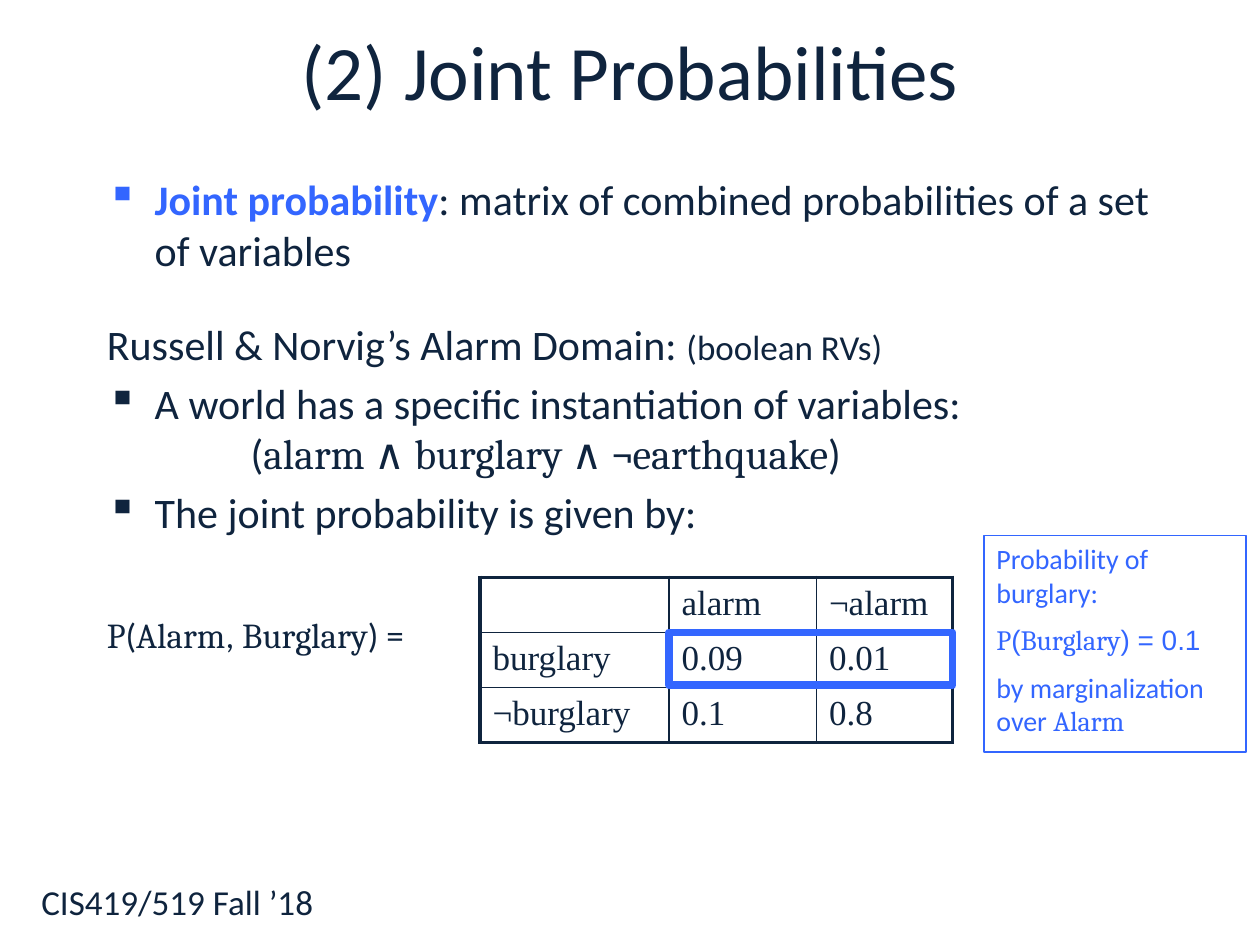
"""Builds the slide on joint probabilities."""
import pptx
import pptx.dml.color
import pptx.enum.shapes
import pptx.enum.text
import pptx.oxml
import pptx.oxml.ns
import pptx.util

NAVY = pptx.dml.color.RGBColor(0x0F, 0x24, 0x3E)
BLUE = pptx.dml.color.RGBColor(0x33, 0x66, 0xFF)
WIDE = pptx.util.Inches(10)
HIGH = pptx.util.Inches(7.5)
SANS, MATH, ROMAN, PLAIN = "Calibri", "Cambria", "Times New Roman", "Arial"
STEP = 0.38
COLS = (15, 11.7, 10.8)
ROWS = (5.83, 5.83, 5.83)
LEFT, TOP = 38.1, 61.1
CELLS = (
    ("", "alarm", "¬alarm"),
    ("burglary", "0.09", "0.01"),
    ("¬burglary", "0.1", "0.8"),
)


def across(share):
    return int(WIDE * share / 100)


def down(share):
    return int(HIGH * share / 100)


def place(x, y, w, h):
    return across(x), down(y), across(w), down(h)


def style(run, size, font, color, bold=False):
    run.font.size = pptx.util.Pt(size)
    run.font.name = font
    run.font.color.rgb = color
    run.font.bold = bold


def write(para, parts, size, color=NAVY, gap=0):
    para.space_before = pptx.util.Pt(gap)
    for text, font, *look in parts:
        run = para.add_run()
        run.text = text
        style(run, size, font, color)
        for key, value in (look[0] if look else {}).items():
            if key == "color":
                run.font.color.rgb = value
            else:
                setattr(run.font, key, value)


def indent(para, left, mark=None):
    props = para._p.get_or_add_pPr()
    props.set("marL", str(pptx.util.Inches(left)))
    if mark:
        props.set("indent", str(-pptx.util.Inches(STEP)))
        item = pptx.oxml.parse_xml(
            f'<a:buChar {pptx.oxml.ns.nsdecls("a")} char="{mark}"/>')
        props.append(item)


def add_box(slide, area):
    box = slide.shapes.add_textbox(*place(*area))
    box.text_frame.word_wrap = True
    return box


def add_line(slide, area, text, size):
    frame = add_box(slide, area).text_frame
    frame.text = text
    style(frame.paragraphs[0].runs[0], size, SANS, NAVY)
    return frame


def add_body(slide):
    frame = add_box(slide, (7.5, 17.73, 85, 72.67)).text_frame
    lines = (
        ([("Joint probability", SANS, {"color": BLUE, "bold": True}),
          (": matrix of combined probabilities of a set of variables", SANS)],
         24, 0, STEP, "▪"),
        ([("Russell & Norvig’s Alarm Domain: ", SANS),
          ("(boolean RVs)", SANS, {"size": pptx.util.Pt(20)})],
         24, 25, 0, None),
        ([("A world has a specific instantiation of variables:", SANS)],
         24, 4.8, STEP, "▪"),
        ([("(", SANS), ("alarm ", MATH), ("∧ ", SANS), ("burglary ", MATH),
          ("∧ ¬", SANS), ("earthquake", MATH), (")", SANS)],
         24, 0, 3 * STEP, None),
        ([("The joint probability is given by:", SANS)],
         24, 4.8, STEP, "▪"),
        ([("P", MATH), ("(", SANS), ("Alarm", MATH), (", ", SANS),
          ("Burglary", MATH), (") =", SANS)],
         20, 44, 0, None),
    )
    for at, (parts, size, gap, left, mark) in enumerate(lines):
        para = frame.add_paragraph() if at else frame.paragraphs[0]
        write(para, parts, size, gap=gap)
        indent(para, left, mark)


def edge(cell, widths):
    props = cell._tc.get_or_add_tcPr()
    for at, (side, width) in enumerate(widths.items()):
        line = pptx.oxml.parse_xml(
            f'<a:{side} {pptx.oxml.ns.nsdecls("a")} w="{pptx.util.Pt(width)}">'
            f'<a:solidFill><a:srgbClr val="{NAVY}"/></a:solidFill></a:{side}>')
        props.insert(at, line)


def add_grid(slide):
    area = place(LEFT, TOP, sum(COLS), sum(ROWS))
    table = slide.shapes.add_table(len(ROWS), len(COLS), *area).table
    table.first_row = table.horz_banding = False
    for col, share in zip(table.columns, COLS):
        col.width = across(share)
    for row, share in zip(table.rows, ROWS):
        row.height = down(share)
    for r, texts in enumerate(CELLS):
        for c, text in enumerate(texts):
            cell = table.cell(r, c)
            cell.fill.background()
            cell.text = text
            for run in cell.text_frame.paragraphs[0].runs:
                style(run, 20, ROMAN, NAVY)
            outer = {"lnL": c == 0, "lnR": c == len(COLS) - 1,
                     "lnT": r == 0, "lnB": r == len(ROWS) - 1}
            edge(cell, {k: 2.25 if out else 1 for k, out in outer.items()})


def add_note(slide):
    box = add_box(slide, (78.1, 56.67, 20.8, 22.93))
    box.line.color.rgb = BLUE
    box.line.width = pptx.util.Pt(0.75)
    lines = (
        [("Probability of burglary:", SANS)],
        [("P", MATH), ("(", PLAIN), ("Burglary", MATH), (") = 0.1", PLAIN)],
        [("by marginalization over ", SANS), ("Alarm", MATH)],
    )
    frame = box.text_frame
    for at, parts in enumerate(lines):
        para = frame.add_paragraph() if at else frame.paragraphs[0]
        write(para, parts, 16, BLUE, 8 if at else 0)


def add_frame(slide):
    area = place(LEFT + COLS[0], TOP + ROWS[0], sum(COLS[1:]), 5.6)
    kind = pptx.enum.shapes.MSO_SHAPE.RECTANGLE
    shape = slide.shapes.add_shape(kind, *area)
    shape.shadow.inherit = False
    shape.fill.background()
    shape.line.color.rgb = BLUE
    shape.line.width = pptx.util.Pt(4.5)


def main():
    deck = pptx.Presentation()
    deck.slide_width, deck.slide_height = WIDE, HIGH
    slide = deck.slides.add_slide(deck.slide_layouts[6])
    add_line(slide, (2.3, 92.53, 96, 7.47), "CIS419/519 Fall ’18", 20)
    title = add_line(slide, (7.5, 0.4, 85, 14), "(2) Joint Probabilities", 44)
    title.vertical_anchor = pptx.enum.text.MSO_ANCHOR.MIDDLE
    title.paragraphs[0].alignment = pptx.enum.text.PP_ALIGN.CENTER
    add_body(slide)
    add_grid(slide)
    add_note(slide)
    add_frame(slide)
    deck.save("out.pptx")


if __name__ == "__main__":
    main()
